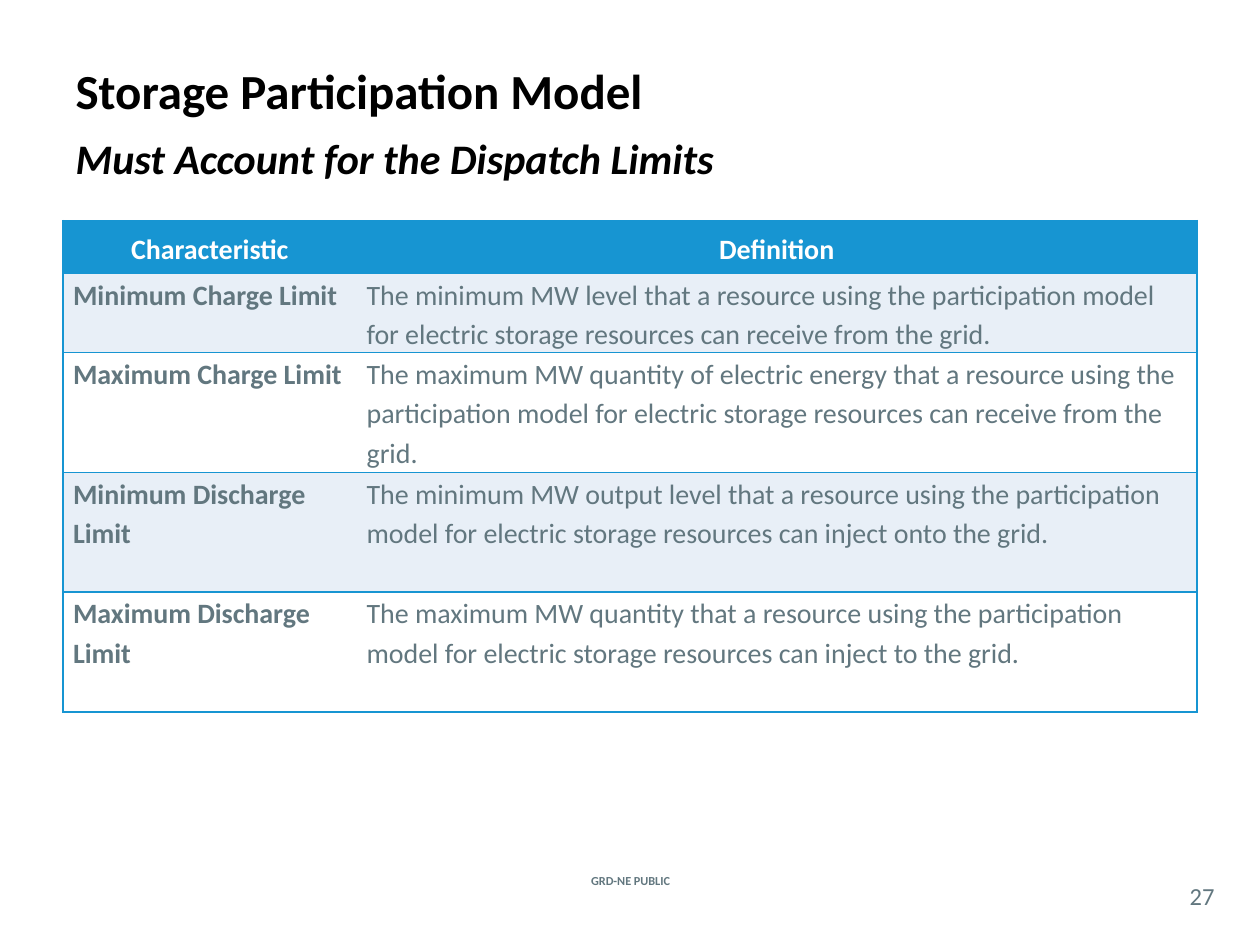
import pptx
import pptx.dml.color
import pptx.enum.text
import pptx.oxml
import pptx.oxml.ns
import pptx.util
from dataclasses import dataclass
from pptx.util import Inches


@dataclass(frozen=True)
class Theme:
    font: str = "Calibri"
    black: str = "000000"
    white: str = "FFFFFF"
    gray: str = "62777F"
    blue: str = "1795D2"
    band: str = "E8EFF7"
    title: int = 28
    subtitle: int = 24
    table: int = 16
    number: int = 14
    marking: int = 7


theme = Theme()
ALIGN = pptx.enum.text.PP_ALIGN
ANCHOR = pptx.enum.text.MSO_ANCHOR


def write(frame, text, size, color, align=ALIGN.LEFT, bold=False, italic=False):
    """Put one formatted paragraph into a text frame."""
    frame.word_wrap = True
    paragraph = frame.paragraphs[0]
    paragraph.alignment = align
    run = paragraph.add_run()
    run.text = text
    settings = {"name": theme.font, "size": pptx.util.Pt(size), "bold": bold, "italic": italic}
    for name, value in settings.items():
        setattr(run.font, name, value)
    run.font.color.rgb = pptx.dml.color.RGBColor.from_string(color)
    return paragraph


def set_border(cell, side, color):
    """Draw one cell edge, or clear it when color is None."""
    paint = f'<a:solidFill><a:srgbClr val="{color}"/></a:solidFill>' if color else "<a:noFill/>"
    return pptx.oxml.parse_xml(
        f'<a:ln{side} {pptx.oxml.ns.nsdecls("a")} w="{pptx.util.Pt(1)}">{paint}</a:ln{side}>')


deck = pptx.Presentation()
deck.slide_width, deck.slide_height = Inches(10), Inches(7.5)
slide = deck.slides.add_slide(deck.slide_layouts[1])

# Title and subtitle
title, subtitle = slide.placeholders[0], slide.placeholders[1]
for heading, top, height in ((title, 0.42, 0.58), (subtitle, 1, 0.5)):
    heading.left, heading.top = Inches(0.5), Inches(top)
    heading.width, heading.height = Inches(9), Inches(height)
    heading.text_frame.auto_size = pptx.enum.text.MSO_AUTO_SIZE.NONE

title.text_frame.vertical_anchor = ANCHOR.MIDDLE
write(title.text_frame, "Storage Participation Model", theme.title, theme.black, bold=True)

subtitle.text_frame.vertical_anchor = ANCHOR.TOP
subtitle_line = write(subtitle.text_frame, "Must Account for the Dispatch Limits",
                      theme.subtitle, theme.black, bold=True, italic=True)
subtitle_line.space_before = pptx.util.Pt(0)
subtitle_format = subtitle_line._p.get_or_add_pPr()
subtitle_format.set("marL", "0")
subtitle_format.set("indent", "0")
subtitle_format.append(pptx.oxml.parse_xml(f'<a:buNone {pptx.oxml.ns.nsdecls("a")}/>'))

# Table of dispatch limits
limits = [
    ("Characteristic", "Definition"),
    ("Minimum Charge Limit",
     "The minimum MW level that a resource using the participation model "
     "for electric storage resources can receive from the grid."),
    ("Maximum Charge Limit",
     "The maximum MW quantity of electric energy that a resource using the "
     "participation model for electric storage resources can receive from the grid."),
    ("Minimum Discharge Limit",
     "The minimum MW output level that a resource using the participation "
     "model for electric storage resources can inject onto the grid."),
    ("Maximum Discharge Limit",
     "The maximum MW quantity that a resource using the participation "
     "model for electric storage resources can inject to the grid."),
]
row_heights = [0.42, 0.63, 0.95, 0.95, 0.95]
column_widths = [2.33, 6.67]
limits_table = slide.shapes.add_table(
    len(limits), len(column_widths), Inches(0.5), Inches(1.75),
    Inches(sum(column_widths)), Inches(sum(row_heights))).table
for column, width in zip(limits_table.columns, column_widths):
    column.width = Inches(width)

for r, (texts, height) in enumerate(zip(limits, row_heights)):
    limits_table.rows[r].height = Inches(height)
    header = r == 0
    fill = theme.blue if header else theme.band if r % 2 else theme.white
    for c, text in enumerate(texts):
        cell = limits_table.cell(r, c)
        cell_format = {
            "margin_left": Inches(0.08), "margin_right": Inches(0.08),
            "margin_top": 0, "margin_bottom": 0,
            "vertical_anchor": ANCHOR.MIDDLE if header else ANCHOR.TOP,
        }
        for name, value in cell_format.items():
            setattr(cell, name, value)
        cell.fill.solid()
        cell.fill.fore_color.rgb = pptx.dml.color.RGBColor.from_string(fill)
        line = write(cell.text_frame, text, theme.table,
                     theme.white if header else theme.gray,
                     ALIGN.CENTER if header else ALIGN.LEFT, bold=header or c == 0)
        line.line_spacing = 1.15
        line.space_after = pptx.util.Pt(10)
        # Horizontal rules and outer edges only
        edges = {"L": theme.blue if c == 0 else None, "R": theme.blue if c == 1 else None,
                 "T": theme.blue, "B": theme.blue}
        for position, (side, color) in enumerate(edges.items()):
            cell._tc.get_or_add_tcPr().insert(position, set_border(cell, side, color))

# Footer marking and page number
footers = [
    ("GRD-NE PUBLIC", (4.27, 6.72, 1.47, 0.54), theme.marking, True),
    ("27", (9.33, 6.96, 0.42, 0.29), theme.number, False),
]
for text, place, size, bold in footers:
    footer = slide.shapes.add_textbox(*map(Inches, place)).text_frame
    footer.vertical_anchor = ANCHOR.MIDDLE
    for margin in ("margin_left", "margin_top", "margin_right", "margin_bottom"):
        setattr(footer, margin, 0)
    write(footer, text, size, theme.gray, ALIGN.CENTER, bold=bold)

deck.save("out.pptx")
